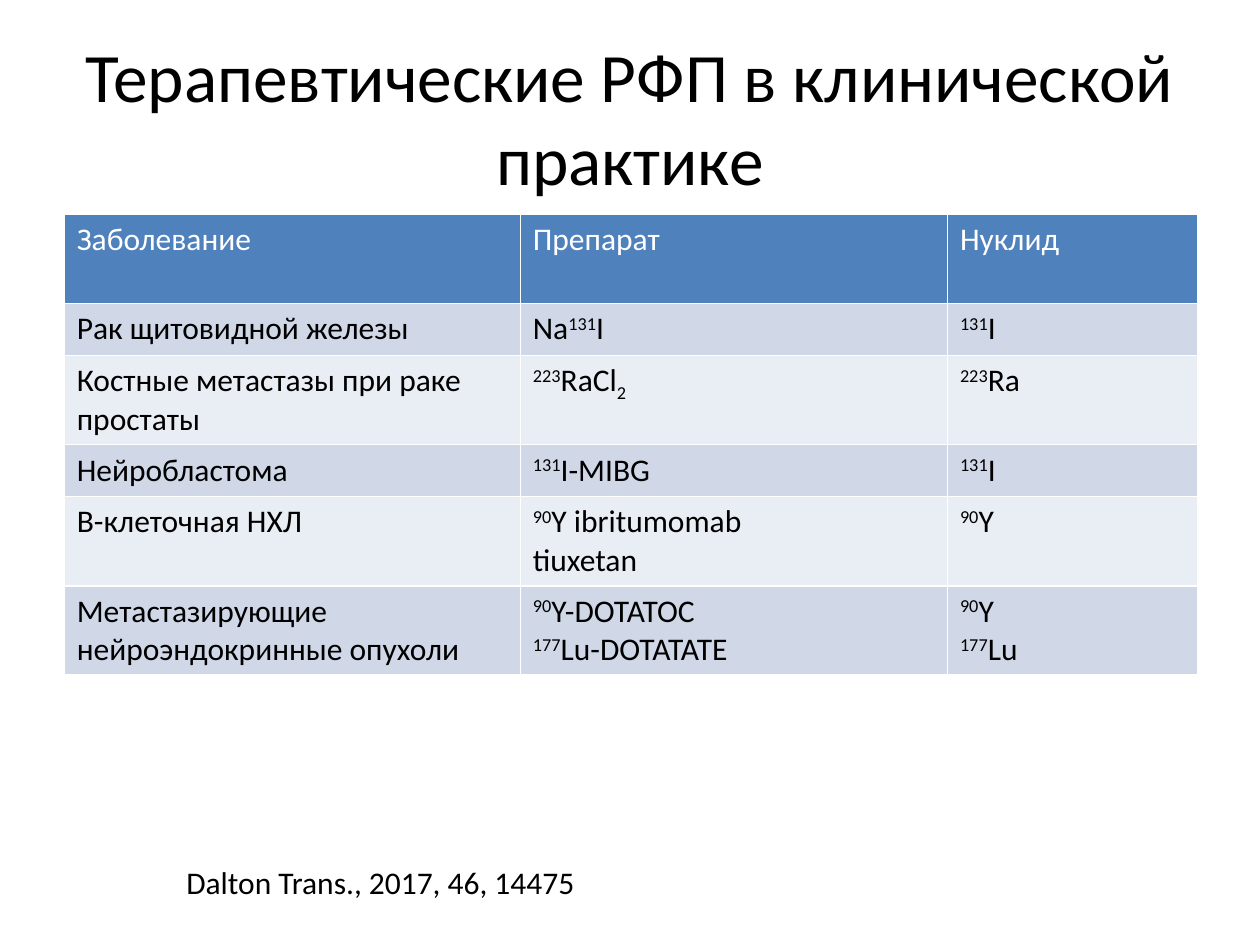
from pptx import Presentation, util as u
from pptx.dml.color import RGBColor
from pptx.enum import text

BLACK = RGBColor(0, 0, 0)
WHITE = RGBColor(255, 255, 255)
BLUE = RGBColor(0x4F, 0x81, 0xBD)
BANDS = [RGBColor(0xE9, 0xED, 0xF4), RGBColor(0xD0, 0xD8, 0xE8)]
SHIFT = {"^": "30000", "_": "-25000"}


def write(frame, words, size=18, color=BLACK, align=text.PP_ALIGN.LEFT,
          anchor=text.MSO_ANCHOR.TOP):
    frame.word_wrap = True
    frame.vertical_anchor = anchor
    for i, line in enumerate(words.split("\n")):
        para = frame.add_paragraph() if i else frame.paragraphs[0]
        para.alignment = align
        for part in line.split("|"):
            run = para.add_run()
            run.text = part.lstrip("^_")
            font = run.font
            font.name, font.size, font.bold = "Calibri", u.Pt(size), False
            font.color.rgb = color
            if part[0] in SHIFT:
                run._r.get_or_add_rPr().set("baseline", SHIFT[part[0]])


deck = Presentation()
deck.slide_width, deck.slide_height = u.Inches(10), u.Inches(7.5)
wide, high = deck.slide_width, deck.slide_height
slide = deck.slides.add_slide(deck.slide_layouts[6])
forms = slide.shapes

title = forms.add_textbox(int(wide * 0.05), int(high * 0.04),
                          int(wide * 0.9), u.Inches(1.25))
write(title.text_frame, "Терапевтические РФП в клинической практике", size=39.6,
      align=text.PP_ALIGN.CENTER, anchor=text.MSO_ANCHOR.MIDDLE)

rows = [
    (2, "Заболевание", "Препарат", "Нуклид"),
    (1, "Рак щитовидной железы", "Na|^131|I", "^131|I"),
    (2, "Костные метастазы при раке простаты", "^223|RaCl|_2", "^223|Ra"),
    (1, "Нейробластома", "^131|I-MIBG", "^131|I"),
    (2, "B-клеточная НХЛ", "^90|Y ibritumomab\ntiuxetan", "^90|Y"),
    (2, "Метастазирующие нейроэндокринные опухоли",
     "^90|Y-DOTATOC\n^177|Lu-DOTATATE", "^90|Y\n^177|Lu"),
]
tall = [u.Inches(0.11 + 0.3 * row[0]) for row in rows]
cols = [u.Inches(3.62), u.Inches(3.39), u.Inches(1.99)]
table = forms.add_table(len(rows), len(cols), u.Inches(0.51), u.Inches(1.7),
                        sum(cols), sum(tall)).table
for col, span in zip(table.columns, cols):
    col.width = span
for r, row in enumerate(rows):
    table.rows[r].height = tall[r]
    for c, words in enumerate(row[1:]):
        cell = table.cell(r, c)
        cell.fill.solid()
        cell.fill.fore_color.rgb = BANDS[r % 2] if r else BLUE
        write(cell.text_frame, words, color=BLACK if r else WHITE)

cite = forms.add_textbox(u.Inches(1.38), u.Inches(6.8), u.Inches(4.88), u.Inches(0.4))
write(cite.text_frame, "Dalton Trans., 2017, 46, 14475")

deck.save("out.pptx")
